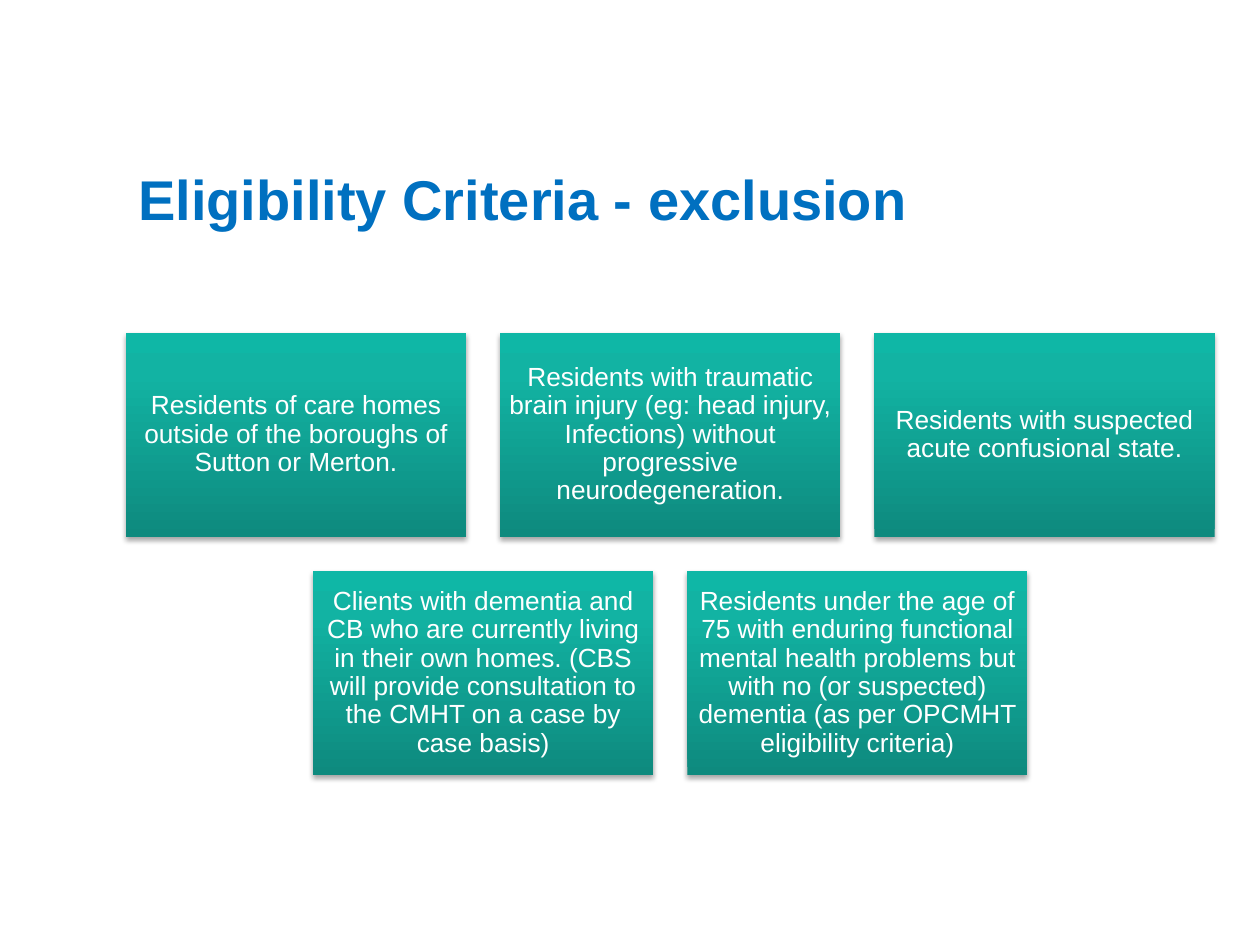
from dataclasses import dataclass

import lxml.etree
import pptx
import pptx.dml.color
import pptx.enum.shapes
import pptx.enum.text
import pptx.oxml.ns
import pptx.slide
import pptx.util

Inches = pptx.util.Inches
Pt = pptx.util.Pt
qn = pptx.oxml.ns.qn

COLOURS = {
    "title": "0070C0",
    "card_text": "FFFFFF",
    "card_bottom": "0E8A7E",
    "card_middle": "12B3A3",
    "card_top": "0FB7A6",
    "shadow": "000000",
}
GRADIENT_STOPS = [(0, "card_bottom"), (80, "card_middle"), (100, "card_top")]

# Card grid: each row is centred on the same vertical axis
GRID_CENTRE, GRID_TOP = 5.32, 2.64
CARD_WIDTH, CARD_HEIGHT, GAP = 2.7, 1.62, 0.27

TITLE_FONT = {"name": "Arial", "size": Pt(32), "bold": True}
CARD_FONT = {"name": "Arial", "size": Pt(15), "bold": False}
CARD_PARAGRAPH = {
    "alignment": pptx.enum.text.PP_ALIGN.CENTER,
    "line_spacing": 0.9,
    "space_after": Pt(5.25),
}
MARGINS = ("margin_left", "margin_top", "margin_right", "margin_bottom")
CARD_FRAME = {name: Inches(0.06) for name in MARGINS}

CRITERIA_ROWS = [
    [
        "Residents of care homes outside of the boroughs of Sutton or Merton.",
        "Residents with traumatic brain injury (eg: head injury, Infections) "
        "without progressive neurodegeneration.",
        "Residents with suspected acute confusional state.",
    ],
    [
        "Clients with dementia and CB who are currently living in their own homes. "
        "(CBS will provide consultation to the CMHT on a case by case basis)",
        "Residents under the age of 75 with enduring functional mental health "
        "problems but with no (or suspected) dementia (as per OPCMHT eligibility criteria)",
    ],
]


@dataclass
class Card:
    text: str
    left: float
    top: float


def apply_format(target: object, values: dict) -> None:
    for name, value in values.items():
        setattr(target, name, value)


def write_text(shape, text: str, colour: str, font: dict, paragraph_format: dict, frame_format: dict) -> None:
    frame = shape.text_frame
    frame.word_wrap = True
    frame.vertical_anchor = pptx.enum.text.MSO_ANCHOR.MIDDLE
    apply_format(frame, frame_format)
    paragraph = frame.paragraphs[0]
    apply_format(paragraph, paragraph_format)
    run = paragraph.add_run()
    run.text = text
    apply_format(run.font, font)
    run.font.color.rgb = pptx.dml.color.RGBColor.from_string(COLOURS[colour])


def add_colour(parent, colour: str):
    return lxml.etree.SubElement(parent, qn("a:srgbClr"), val=COLOURS[colour])


def fill_gradient(shape) -> None:
    shape.fill.gradient()
    shape.fill.gradient_angle = 90
    stop_list = shape.element.spPr.find(".//" + qn("a:gsLst"))
    for old_stop in list(stop_list):
        stop_list.remove(old_stop)
    for percent, colour in GRADIENT_STOPS:
        stop = lxml.etree.SubElement(stop_list, qn("a:gs"), pos=str(percent * 1000))
        add_colour(stop, colour)


def add_shadow(shape) -> None:
    shape.shadow.inherit = False
    effects = shape.element.spPr.find(qn("a:effectLst"))
    shadow = lxml.etree.SubElement(
        effects, qn("a:outerShdw"), blurRad=str(Pt(3.1)), dist=str(Pt(1.8)),
        dir=str(90 * 60000), rotWithShape="0",
    )
    lxml.etree.SubElement(add_colour(shadow, "shadow"), qn("a:alpha"), val="35000")


def add_card(slide: pptx.slide.Slide, card: Card) -> None:
    shape = slide.shapes.add_shape(
        pptx.enum.shapes.MSO_SHAPE.RECTANGLE,
        Inches(card.left), Inches(card.top), Inches(CARD_WIDTH), Inches(CARD_HEIGHT),
    )
    fill_gradient(shape)
    shape.line.fill.background()
    add_shadow(shape)
    write_text(shape, card.text, "card_text", CARD_FONT, CARD_PARAGRAPH, CARD_FRAME)


def lay_out_cards() -> list[Card]:
    cards = []
    for row, texts in enumerate(CRITERIA_ROWS):
        row_width = len(texts) * (CARD_WIDTH + GAP) - GAP
        row_left = GRID_CENTRE - row_width / 2
        top = GRID_TOP + row * (CARD_HEIGHT + GAP)
        for column, text in enumerate(texts):
            cards.append(Card(text, row_left + column * (CARD_WIDTH + GAP), top))
    return cards


def main() -> None:
    presentation = pptx.Presentation()
    presentation.slide_width = Inches(10)
    presentation.slide_height = Inches(7.5)
    slide = presentation.slides.add_slide(presentation.slide_layouts[6])

    # Title
    title = slide.shapes.add_textbox(Inches(1), Inches(1.15), Inches(8.65), Inches(0.84))
    write_text(title, "Eligibility Criteria - exclusion", "title", TITLE_FONT, {}, {})

    # Exclusion criteria
    for card in lay_out_cards():
        add_card(slide, card)

    presentation.save("out.pptx")


if __name__ == "__main__":
    main()
